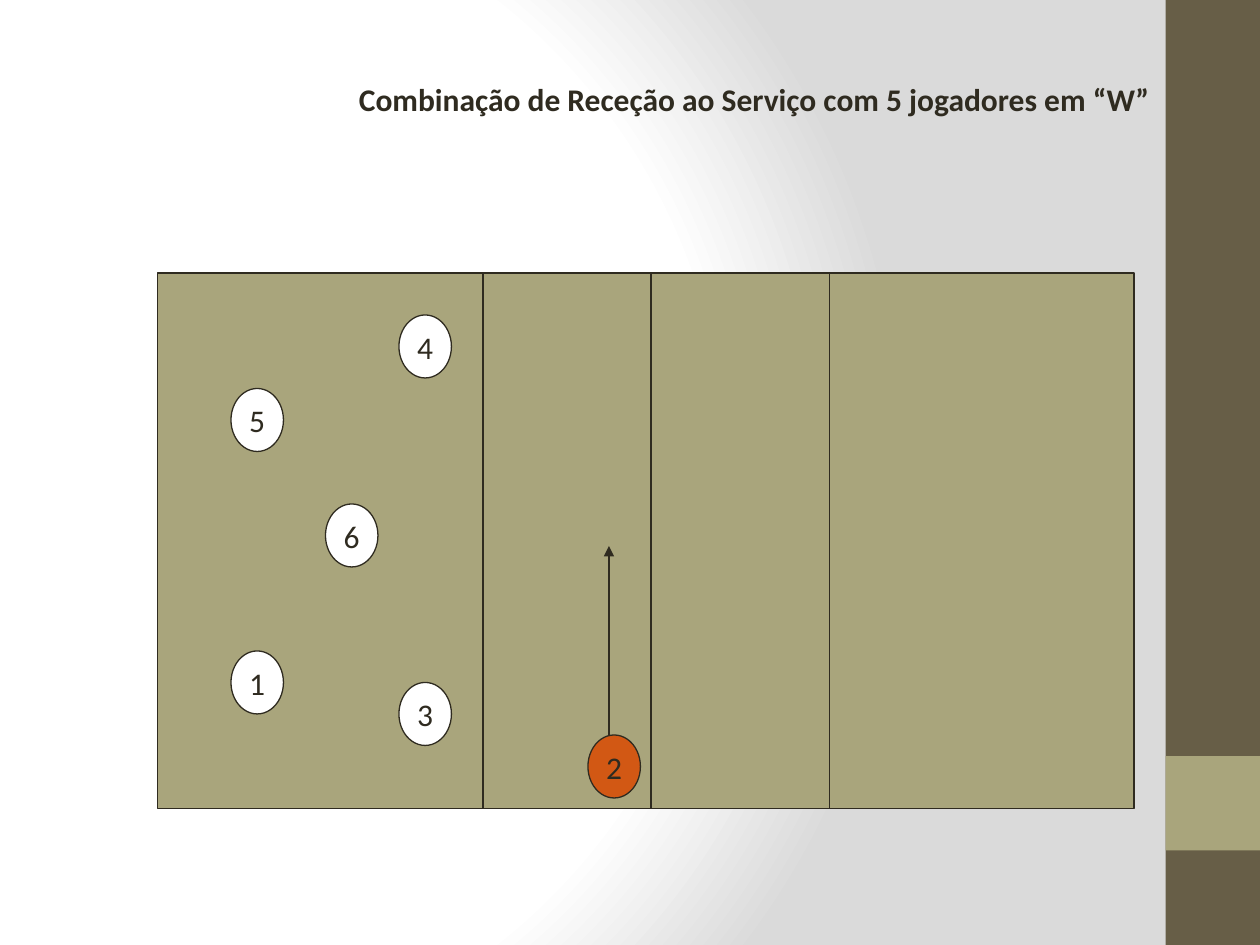
from lxml.etree import SubElement
from pptx import Presentation
from pptx.dml.color import RGBColor
from pptx.enum.shapes import MSO_CONNECTOR, MSO_SHAPE
from pptx.enum.text import MSO_ANCHOR, MSO_AUTO_SIZE, PP_ALIGN
from pptx.oxml import parse_xml
from pptx.oxml.ns import nsdecls, qn
from pptx.util import Pt

WHITE = RGBColor(0xFF, 0xFF, 0xFF)
GREY = RGBColor(0xDA, 0xDA, 0xDA)
INK = RGBColor(0x2F, 0x2B, 0x20)
BROWN = RGBColor(0x67, 0x5E, 0x47)
OLIVE = RGBColor(0xA9, 0xA5, 0x7C)
ORANGE = RGBColor(0xD2, 0x58, 0x14)

COURT_LEFT, COURT_TOP, COURT_WIDTH, COURT_HEIGHT = 90, 156, 558, 306
COURT_BOTTOM = COURT_TOP + COURT_HEIGHT
PLAYER_WIDTH, PLAYER_HEIGHT = 30, 36


class SlideBuilder:
    font_format = {"name": "Calibri", "size": Pt(18), "bold": False}
    line_width = Pt(0.75)

    def __init__(self, slide):
        self.slide = slide

    def background(self, stops):
        self.slide.background.fill.solid()
        properties = self.slide.element.find(".//" + qn("p:bgPr"))
        stop_xml = "".join(
            f'<a:gs pos="{position * 1000}"><a:srgbClr val="{color}"/></a:gs>'
            for position, color in stops
        )
        gradient = parse_xml(
            f'<a:gradFill {nsdecls("a")} rotWithShape="1"><a:gsLst>{stop_xml}</a:gsLst>'
            '<a:path path="circle"><a:fillToRect l="20000" t="50000" r="100000" b="50000"/>'
            "</a:path></a:gradFill>"
        )
        properties.replace(properties[0], gradient)

    def set_text(self, text_frame, text, alignment, **changes):
        text_frame.word_wrap = False
        paragraph = text_frame.paragraphs[0]
        paragraph.alignment = alignment
        run = paragraph.add_run()
        run.text = text
        for name, value in {**self.font_format, **changes}.items():
            setattr(run.font, name, value)
        run.font.color.rgb = INK

    def title(self, text, left, top, width, height):
        shape = self.slide.shapes.add_textbox(Pt(left), Pt(top), Pt(width), Pt(height))
        self.set_text(shape.text_frame, text, PP_ALIGN.LEFT, bold=True)
        shape.text_frame.auto_size = MSO_AUTO_SIZE.SHAPE_TO_FIT_TEXT

    def shape(self, kind, left, top, width, height, color, outlined=True):
        shape = self.slide.shapes.add_shape(kind, Pt(left), Pt(top), Pt(width), Pt(height))
        shape.shadow.inherit = False
        shape.fill.solid()
        shape.fill.fore_color.rgb = color
        if outlined:
            shape.line.color.rgb = INK
            shape.line.width = self.line_width
        else:
            shape.line.fill.background()
        return shape

    def player(self, number, left, top, color):
        shape = self.shape(MSO_SHAPE.OVAL, left, top, PLAYER_WIDTH, PLAYER_HEIGHT, color)
        shape.text_frame.vertical_anchor = MSO_ANCHOR.MIDDLE
        self.set_text(shape.text_frame, number, PP_ALIGN.CENTER)

    def vertical_line(self, x, start, end, arrow=False):
        connector = self.slide.shapes.add_connector(
            MSO_CONNECTOR.STRAIGHT, Pt(x), Pt(start), Pt(x), Pt(end)
        )
        connector.line.color.rgb = INK
        connector.line.width = self.line_width
        properties = connector.element.spPr
        if arrow:
            SubElement(properties.find(qn("a:ln")), qn("a:tailEnd"), type="triangle")
        SubElement(properties, qn("a:effectLst"))


def main():
    presentation = Presentation()
    presentation.slide_width = Pt(720)
    presentation.slide_height = Pt(540)
    builder = SlideBuilder(presentation.slides.add_slide(presentation.slide_layouts[6]))

    builder.background([(0, WHITE), (75, WHITE), (100, GREY)])
    builder.shape(MSO_SHAPE.RECTANGLE, 666, 0, 54, 540, BROWN, outlined=False)
    builder.shape(MSO_SHAPE.RECTANGLE, 666, 432, 54, 54, OLIVE, outlined=False)
    builder.title(
        "Combinação de Receção ao Serviço com 5 jogadores em “W”", 198, 42, 470, 29
    )
    builder.shape(
        MSO_SHAPE.RECTANGLE, COURT_LEFT, COURT_TOP, COURT_WIDTH, COURT_HEIGHT, OLIVE
    )

    players = [
        ("3", 228, 390, WHITE),
        ("4", 228, 180, WHITE),
        ("5", 132, 222, WHITE),
        ("6", 186, 288, WHITE),
        ("2", 336, 420, ORANGE),
        ("1", 132, 372, WHITE),
    ]
    for player in players:
        builder.player(*player)

    for x in (372, 276, 474):
        builder.vertical_line(x, COURT_TOP, COURT_BOTTOM)
    builder.vertical_line(348, 420, 312, arrow=True)

    presentation.save("out.pptx")


if __name__ == "__main__":
    main()
